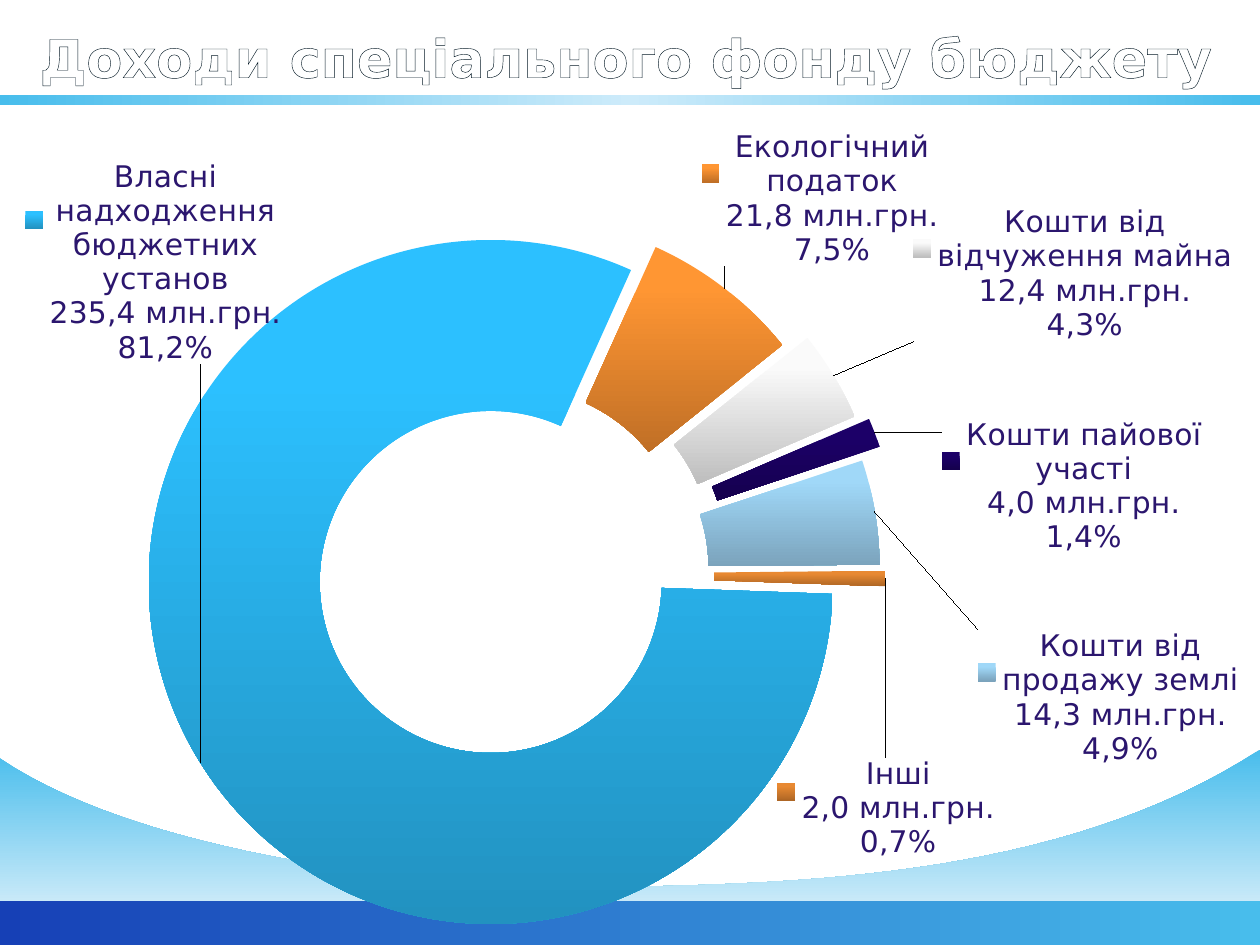
from dataclasses import dataclass
from math import cos, radians, sin

from pptx import Presentation
from pptx.chart.data import CategoryChartData
from pptx.dml.color import RGBColor
from pptx.enum.chart import XL_CHART_TYPE
from pptx.enum.shapes import MSO_SHAPE
from pptx.enum.text import MSO_ANCHOR, PP_ALIGN
from pptx.oxml import parse_xml
from pptx.oxml.ns import nsdecls, qn
from pptx.util import Cm, Pt

RECT = MSO_SHAPE.RECTANGLE
RING = XL_CHART_TYPE.DOUGHNUT_EXPLODED
CENTER = PP_ALIGN.CENTER
BOTTOM = MSO_ANCHOR.BOTTOM


@dataclass(frozen=True)
class Theme:
    font: str = "DejaVu Sans"
    title: float = 30
    label: float = 17
    white: str = "FFFFFF"
    edge: str = "051925"
    ink: str = "2B166E"
    sky: str = "48BDEC"
    mist: str = "EEF6FC"
    haze: str = "CDEBFA"
    royal: str = "1640B6"


THEME = Theme()
START = 92
PULL = 7
CHART = (0.51, 2.34, 24.61, 16.41)
MID = (39.2, 56.3)     # ring centre, percent of the chart frame
OUTER = (28, 42)       # ring radius, likewise

# name, value, amount, share, light and dark colour, explosion, label centre
ITEMS = [
    ("Власні надходження бюджетних установ", 235.4, "235,4", "81,2%",
     "2CC0FF", "2292C0", 9, (10.4, 18)),
    ("Екологічний податок", 21.8, "21,8", "7,5%",
     "FF9633", "C06F26", 11, (65.1, 10.2)),
    ("Кошти від відчуження майна", 12.4, "12,4", "4,3%",
     "FAFAFA", "BEBEBE", 25, (85.8, 19.4)),
    ("Кошти пайової участі", 4.0, "4,0", "1,4%",
     "1C0068", "15004E", 32, (85.7, 45.5)),
    ("Кошти від продажу землі", 14.3, "14,3", "4,9%",
     "A0D8F8", "7BA3BC", 20, (88.7, 71.5)),
    ("Інші", 2.1, "2,0", "0,7%",
     "E88932", "AE6625", 23, (70.5, 85.1)),
]


def color(code):
    return RGBColor.from_string(code)


def shade(fill, stops, angle):
    """Fill with a linear gradient; stops are (percent, colour)."""
    fill.gradient()
    fill.gradient_angle = angle
    grad = fill._xPr.find(qn("a:gradFill"))
    marks = "".join(
        f'<a:gs pos="{at * 1000}"><a:srgbClr val="{code}"/></a:gs>'
        for at, code in stops)
    grad.replace(grad.find(qn("a:gsLst")), parse_xml(
        f'<a:gsLst {nsdecls("a")}>{marks}</a:gsLst>'))


def set_font(font, size, code):
    font.name, font.size = THEME.font, Pt(size)
    font.color.rgb = color(code)


def finish(shape, stops, angle):
    shade(shape.fill, stops, angle)
    shape.line.fill.background()
    shape.shadow.inherit = False


def add_band(slide, top, height, stops):
    band = slide.shapes.add_shape(RECT, 0, Cm(top), Cm(25.4), Cm(height))
    finish(band, stops, 0)


def curve(p, q, r, s, steps=30):
    """Points along a cubic curve, without its first point."""
    for i in range(1, steps + 1):
        t = i / steps
        u = 1 - t
        yield tuple(
            Cm(u**3 * a + 3 * u * u * t * b + 3 * u * t * t * c + t**3 * d)
            for a, b, c, d in zip(p, q, r, s))


def add_wave(slide):
    right, low, left = (25.4, 15.11), (12.5, 17.88), (0, 15.29)
    pen = slide.shapes.build_freeform(Cm(25.4), Cm(19.05))
    pen.add_line_segments([
        tuple(map(Cm, right)),
        *curve(right, (21.56, 17.65), (16.31, 17.81), low),
        *curve(low, (8.69, 17.96), (2.82, 17.22), left),
        (0, Cm(19.05))])
    finish(pen.convert_to_shape(),
           [(0, THEME.sky), (100, THEME.mist)], 270)


def add_title(slide, text):
    title = slide.shapes.title
    title.left, title.top = Cm(0.42), Cm(0.38)
    title.width, title.height = Cm(24.41), Cm(1.4)
    frame = title.text_frame
    frame.text = text
    frame.vertical_anchor = BOTTOM
    frame.margin_left = frame.margin_right = frame.margin_bottom = 0
    para = frame.paragraphs[0]
    para.alignment = CENTER
    font = para.runs[0].font
    set_font(font, THEME.title, THEME.white)
    font.bold = True
    font._rPr.insert(0, parse_xml(
        f'<a:ln {nsdecls("a")} w="9525"><a:solidFill>'
        f'<a:srgbClr val="{THEME.edge}"/></a:solidFill></a:ln>'))


def add_layout(parent, index, **parts):
    marks = "".join(f'<c:{k} val="{v}"/>' for k, v in parts.items())
    for old in parent.findall(qn("c:layout")):
        parent.remove(old)
    parent.insert(index, parse_xml(
        f'<c:layout {nsdecls("c")}><c:manualLayout>{marks}'
        '</c:manualLayout></c:layout>'))


def add_label(point, lines, shift):
    """Label a slice, moved by shift percent of the chart frame."""
    label = point.data_label
    frame = label.text_frame
    frame.text = "\n".join(lines)
    for para in frame.paragraphs:
        set_font(para.runs[0].font, THEME.label, THEME.ink)
    mark = label._dLbl
    for name in ("LegendKey", "Val", "CatName", "Percent"):
        mark.find(qn(f"c:show{name}")).set("val", "1")
    x, y = (round(part / 100, 4) for part in shift)
    add_layout(mark, 1, x=x, y=y)


def add_ring(slide):
    data = CategoryChartData(number_format="0.0")
    data.categories = [item[0] for item in ITEMS]
    data.add_series("Series 1", [item[1] for item in ITEMS])
    chart = slide.shapes.add_chart(RING, *map(Cm, CHART), data).chart
    chart.has_legend = chart.has_title = False
    set_font(chart.font, 18, THEME.ink)
    plot = chart.plots[0]
    plot.vary_by_categories = True
    ring = plot._element
    ring.find(qn("c:firstSliceAng")).set("val", str(START))
    ring.find(qn("c:holeSize")).set("val", "31")
    add_layout(ring.getparent(), 0, layoutTarget="inner", xMode="edge",
               yMode="edge", x=0.102, y=0.127, w=0.58, h=0.871)

    series = plot.series[0]
    series._element.find(qn("c:explosion")).set("val", str(PULL))
    marks = series.data_labels
    set_font(marks.font, THEME.label, THEME.ink)
    marks.show_value = marks.show_percentage = True
    marks.show_category_name = marks.show_legend_key = True
    marks._element.find(qn("c:showLeaderLines")).set("val", "1")
    total, done = sum(item[1] for item in ITEMS), 0
    for i, (name, value, sum_, share, light, dark, pull, goal) in enumerate(
            ITEMS):
        point = series.points[i]
        shade(point.format.fill, [(20, light), (100, dark)], 270)
        point.format.line.fill.background()
        point._element.get_or_add_dPt_for_point(i).find(
            qn("c:spPr")).addprevious(parse_xml(
                f'<c:explosion {nsdecls("c")} val="{pull}"/>'))
        turn = radians(START + 360 * (done + value / 2) / total)
        done += value
        reach = 0.75 + pull / 200
        home = (MID[0] + OUTER[0] * reach * sin(turn),
                MID[1] - OUTER[1] * reach * cos(turn))
        add_label(point, (name, f"{sum_} млн.грн.", share),
                  (goal[0] - home[0], goal[1] - home[1]))


def main():
    deck = Presentation()
    deck.slide_width, deck.slide_height = Cm(25.4), Cm(19.05)
    slide = deck.slides.add_slide(deck.slide_layouts[5])
    add_wave(slide)
    add_band(slide, 18.16, 0.89, [(0, THEME.royal), (100, THEME.sky)])
    add_band(slide, 1.91, 0.2,
             [(0, THEME.sky), (50, THEME.haze), (100, THEME.sky)])
    add_title(slide, "Доходи спеціального фонду бюджету")
    add_ring(slide)
    deck.save("out.pptx")


if __name__ == "__main__":
    main()
